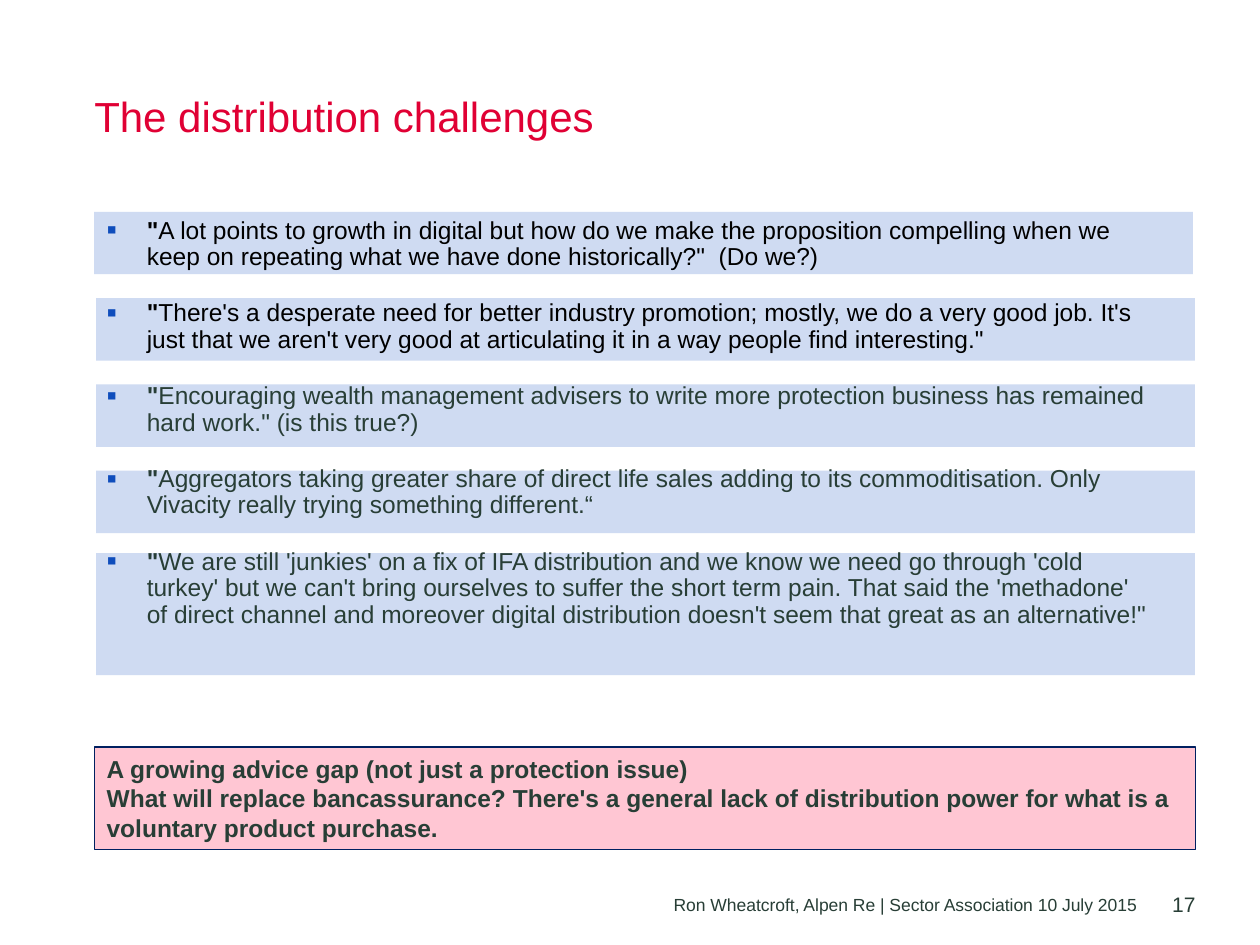
from lxml import etree
from pptx import Presentation
from pptx.dml.color import RGBColor
from pptx.enum.shapes import MSO_SHAPE
from pptx.enum.text import MSO_ANCHOR, PP_ALIGN
from pptx.oxml.ns import qn
from pptx.util import Cm, Pt

RED = RGBColor(0xE0, 0x00, 0x34)
BLACK = RGBColor(0x00, 0x00, 0x00)
DARK_GREEN = RGBColor(0x28, 0x3E, 0x36)
PALE_BLUE = RGBColor(0xCF, 0xDB, 0xF2)
BULLET_BLUE = RGBColor(0x0F, 0x4D, 0xBC)
PINK = RGBColor(0xFF, 0xC6, 0xD3)
NAVY = RGBColor(0x00, 0x20, 0x60)

LEFT = Cm(1.9)
FULL_WIDTH = Cm(22.2)
BAND_WIDTH = Cm(22.15)
QUOTES_TOP = 4.27
BAND_PITCH = 1.74

QUOTES = [
    ("A lot points to growth in digital but how do we make the proposition compelling "
     "when we keep on repeating what we have done historically?\"  (Do we?)", BLACK),
    ("There's a desperate need for better industry promotion; mostly, we do a very good "
     "job. It's just that we aren't very good at articulating it in a way people find "
     "interesting.\"", BLACK),
    ("Encouraging wealth management advisers to write more protection business has "
     "remained hard work.\" (is this true?)", DARK_GREEN),
    ("Aggregators taking greater share of direct life sales adding to its "
     "commoditisation. Only Vivacity really trying something different.“", DARK_GREEN),
    ("We are still 'junkies' on a fix of IFA distribution and we know we need go through "
     "'cold turkey' but we can't bring ourselves to suffer the short term pain. That said "
     "the 'methadone' of direct channel and moreover digital distribution doesn't seem "
     "that great as an alternative!\"", DARK_GREEN),
]
CONCLUSIONS = [
    "A growing advice gap (not just a protection issue)",
    "What will replace bancassurance? There's a general lack of distribution power for "
    "what is a voluntary product purchase.",
]


def set_font(paragraph, size, color, bold=False):
    font = paragraph.font
    font.name = "Arial"
    font.size = Pt(size)
    font.bold = bold
    font.color.rgb = color


def remove_margins(frame):
    frame.margin_left = frame.margin_right = frame.margin_top = frame.margin_bottom = 0


def add_title(slide, text):
    title = slide.shapes.title
    title.left, title.top, title.width, title.height = LEFT, Cm(1.93), FULL_WIDTH, Cm(1.93)
    frame = title.text_frame
    remove_margins(frame)
    frame.vertical_anchor = MSO_ANCHOR.TOP
    frame.text = text
    heading = frame.paragraphs[0]
    heading.alignment = PP_ALIGN.LEFT
    heading.line_spacing = 0.9
    set_font(heading, 24, RED)


def add_rectangle(slide, left, top, width, height, fill):
    rectangle = slide.shapes.add_shape(MSO_SHAPE.RECTANGLE, left, top, width, height)
    rectangle.shadow.inherit = False
    rectangle.fill.solid()
    rectangle.fill.fore_color.rgb = fill
    rectangle.line.fill.background()
    return rectangle


def add_bands(slide):
    """Place one band behind each quote; the last is taller and starts slightly higher."""
    add_rectangle(slide, LEFT, Cm(QUOTES_TOP), BAND_WIDTH, Cm(1.26), PALE_BLUE)
    for row in range(1, 4):
        add_rectangle(slide, Cm(1.94), Cm(QUOTES_TOP + row * BAND_PITCH),
                      BAND_WIDTH, Cm(1.26), PALE_BLUE)
    add_rectangle(slide, Cm(1.94), Cm(11.15), BAND_WIDTH, Cm(2.46), PALE_BLUE)


def add_square_bullet(paragraph):
    properties = paragraph._p.get_or_add_pPr()
    properties.set("marL", str(Cm(0.81)))
    properties.set("indent", str(-Cm(0.81)))
    bullet_color = etree.SubElement(properties, qn("a:buClr"))
    etree.SubElement(bullet_color, qn("a:srgbClr"), val=str(BULLET_BLUE))
    etree.SubElement(properties, qn("a:buSzPct"), val="120000")
    etree.SubElement(properties, qn("a:buFont"), typeface="Arial")
    etree.SubElement(properties, qn("a:buChar"), char="▪")
    tabs = etree.SubElement(properties, qn("a:tabLst"))
    etree.SubElement(tabs, qn("a:tab"), pos=str(Cm(0.48)), algn="l")


def add_quotes(slide):
    box = slide.shapes.add_textbox(LEFT, Cm(QUOTES_TOP), Cm(21.62), Cm(9.35))
    frame = box.text_frame
    frame.word_wrap = True
    for number, (quote, color) in enumerate(QUOTES):
        paragraph = frame.add_paragraph() if number else frame.paragraphs[0]
        add_square_bullet(paragraph)
        paragraph.line_spacing = 0.9
        paragraph.space_before = Pt(7 if number else 0)
        paragraph.space_after = Pt(10)
        set_font(paragraph, 14, color)
        opening_mark = paragraph.add_run()
        opening_mark.text = '"'
        opening_mark.font.bold = True
        paragraph.add_run().text = quote


def add_conclusion(slide):
    conclusion = add_rectangle(slide, LEFT, Cm(15.06), FULL_WIDTH, Cm(2.06), PINK)
    conclusion.line.color.rgb = NAVY
    conclusion.line.width = Pt(0.75)
    frame = conclusion.text_frame
    frame.word_wrap = True
    frame.text = "\n".join(CONCLUSIONS)
    for paragraph in frame.paragraphs:
        paragraph.alignment = PP_ALIGN.LEFT
        set_font(paragraph, 14, DARK_GREEN, bold=True)


def add_footer_text(slide, text, left, top, width, height, size):
    box = slide.shapes.add_textbox(left, top, width, height)
    frame = box.text_frame
    remove_margins(frame)
    frame.word_wrap = True
    frame.vertical_anchor = MSO_ANCHOR.BOTTOM
    frame.text = text
    frame.paragraphs[0].alignment = PP_ALIGN.RIGHT
    set_font(frame.paragraphs[0], size, DARK_GREEN)


def main():
    presentation = Presentation()
    presentation.slide_width = Cm(25.4)
    presentation.slide_height = Cm(19.05)
    slide = presentation.slides.add_slide(presentation.slide_layouts[5])
    add_title(slide, "The distribution challenges")
    add_bands(slide)
    add_quotes(slide)
    add_conclusion(slide)
    add_footer_text(slide, "Ron Wheatcroft, Alpen Re | Sector Association 10 July 2015",
                    Cm(6.5), Cm(18.06), Cm(16.41), Cm(0.38), 10)
    add_footer_text(slide, "17", Cm(23.5), Cm(17.98), Cm(0.6), Cm(0.51), 12)
    presentation.save("out.pptx")


if __name__ == "__main__":
    main()
